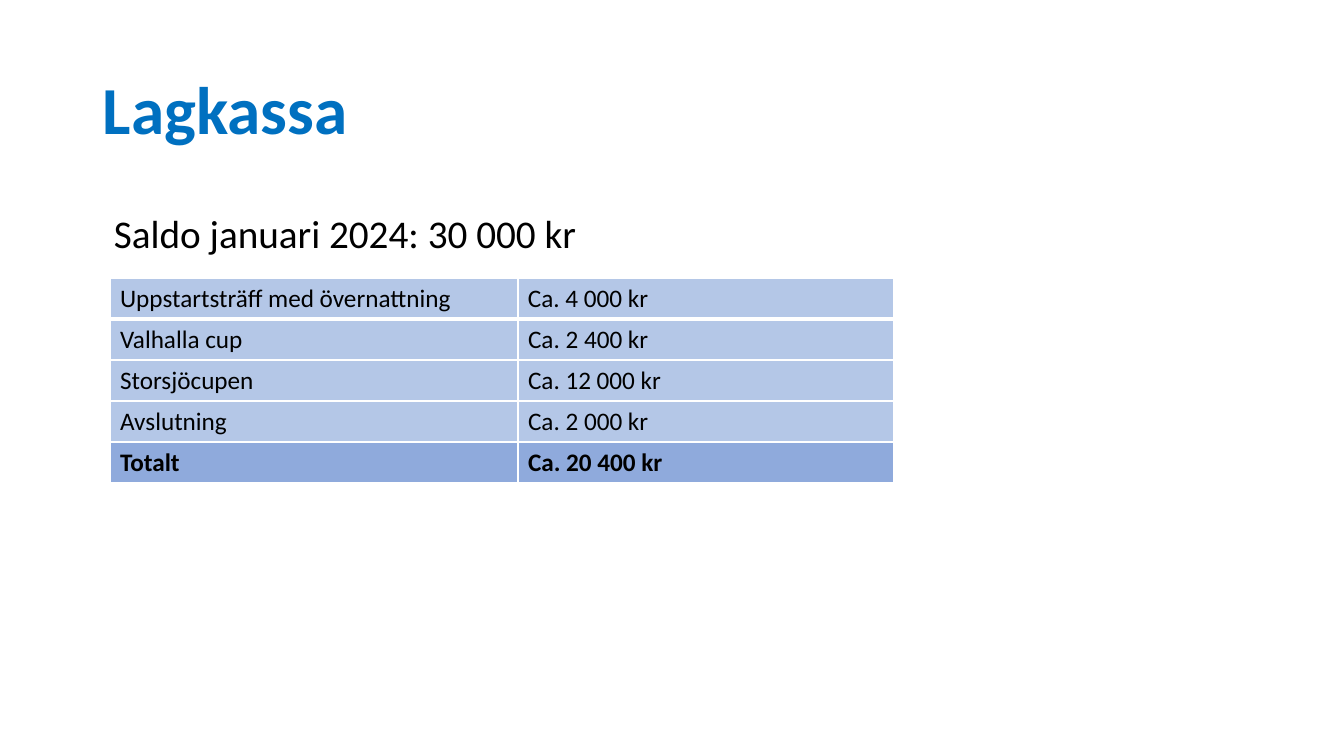
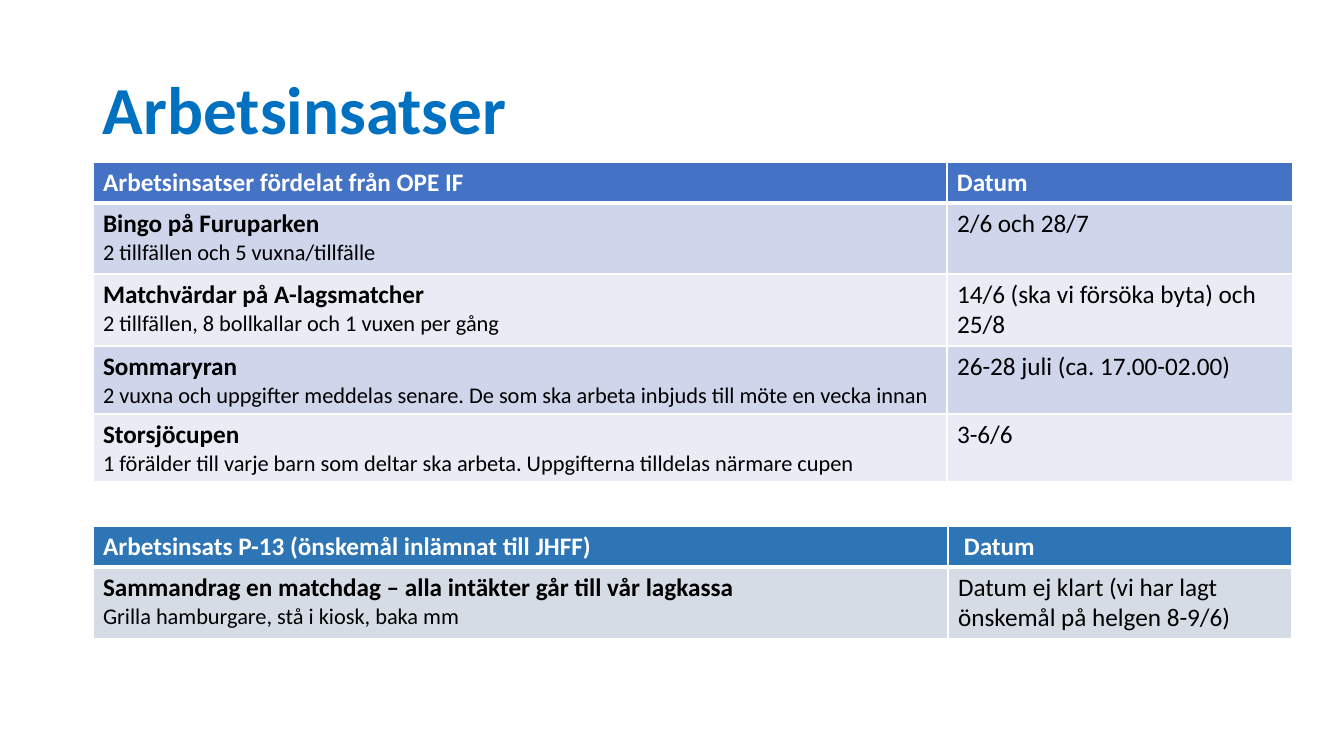
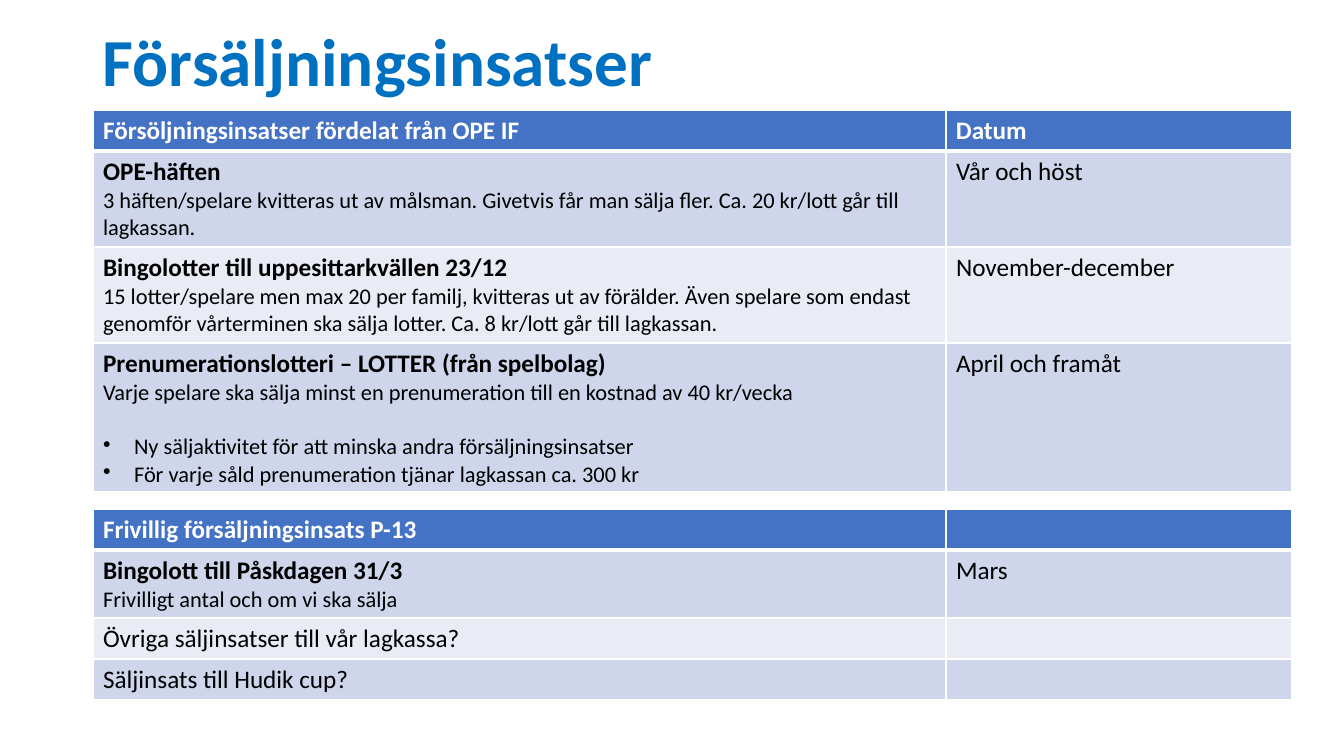
import pptx
import pptx.dml.color
import pptx.enum.text
import pptx.oxml.ns
import pptx.util
import lxml.etree

PX = 12192000 / 1344
COLORS = {
    "title": "0070C0", "black": "000000", "white": "FFFFFF",
    "sum_row": "B4C7E7", "sum_total": "8FAADC",
    "blue": "4472C4", "band_dark": "CFD5EA", "band_light": "E9EBF5",
    "teal": "2E75B6", "band_grey": "D6DCE5",
}
FORMATS = {
    "title": ({"size": pptx.util.Pt(48), "bold": True}, "title"),
    "balance": ({"size": pptx.util.Pt(28), "bold": False}, "black"),
    "header": ({"size": pptx.util.Pt(18), "bold": True}, "white"),
    "strong": ({"size": pptx.util.Pt(18), "bold": True}, "black"),
    "plain": ({"size": pptx.util.Pt(18), "bold": False}, "black"),
    "detail": ({"size": pptx.util.Pt(16), "bold": False}, "black"),
    "bullet": ({"size": pptx.util.Pt(16), "bold": False}, "black"),
}
BORDERS = ("a:lnL", "a:lnR", "a:lnT", "a:lnB")
HEADER = 41
BULLET_INDENT = round(31 * PX)
DEFAULT_INSET = 10


def px(*lengths):
    return [pptx.util.Emu(round(length * PX)) for length in lengths]


def write_lines(frame, lines):
    previous = None
    for index, (style, text) in enumerate(lines):
        para = frame.paragraphs[0] if index == 0 else frame.add_paragraph()
        if style == "bullet":
            properties = para._p.get_or_add_pPr()
            properties.set("marL", str(BULLET_INDENT))
            properties.set("indent", str(-BULLET_INDENT))
            bullet = lxml.etree.SubElement(properties, pptx.oxml.ns.qn("a:buChar"))
            bullet.set("char", "•")
            if previous != "bullet":
                para.space_before = pptx.util.Pt(19.5)
        if style == "title":
            para.line_spacing = 0.9
        span = para.add_run()
        span.text = text
        values, color = FORMATS[style]
        for name, value in {"name": "Calibri", **values}.items():
            setattr(span.font, name, value)
        span.font.color.rgb = pptx.dml.color.RGBColor.from_string(COLORS[color])
        previous = style


pages = [
    {
        "boxes": [
            ("title", "Lagkassa", (93, 40, 1159, 146)),
            ("balance", "Saldo januari 2024: 30 000 kr", (104, 204, 569, 57)),
        ],
        "tables": [{
            "at": (110, 278), "columns": (408, 376), "heights": [HEADER] * 5,
            "fills": ["sum_row"] * 4 + ["sum_total"],
            "rows": [
                [[("plain", "Uppstartsträff med övernattning")], [("plain", "Ca. 4 000 kr")]],
                [[("plain", "Valhalla cup")], [("plain", "Ca. 2 400 kr")]],
                [[("plain", "Storsjöcupen")], [("plain", "Ca. 12 000 kr")]],
                [[("plain", "Avslutning")], [("plain", "Ca. 2 000 kr")]],
                [[("strong", "Totalt")], [("strong", "Ca. 20 400 kr")]],
            ],
        }],
    },
    {
        "boxes": [("title", "Arbetsinsatser", (93, 40, 1159, 146))],
        "tables": [
            {
                "at": (93, 162), "columns": (854, 346), "heights": [HEADER, 71, 72, 68, 68],
                "fills": ["blue", "band_dark", "band_light", "band_dark", "band_light"],
                "rows": [
                    [[("header", "Arbetsinsatser fördelat från OPE IF")], [("header", "Datum")]],
                    [[("strong", "Bingo på Furuparken"),
                      ("detail", "2 tillfällen och 5 vuxna/tillfälle")],
                     [("plain", "2/6 och 28/7")]],
                    [[("strong", "Matchvärdar på A-lagsmatcher"),
                      ("detail", "2 tillfällen, 8 bollkallar och 1 vuxen per gång")],
                     [("plain", "14/6 (ska vi försöka byta) och 25/8")]],
                    [[("strong", "Sommaryran"),
                      ("detail", "2 vuxna och uppgifter meddelas senare. De som ska arbeta inbjuds till möte en vecka innan")],
                     [("plain", "26-28 juli (ca. 17.00-02.00)")]],
                    [[("strong", "Storsjöcupen"),
                      ("detail", "1 förälder till varje barn som deltar ska arbeta. Uppgifterna tilldelas närmare cupen")],
                     [("plain", "3-6/6")]],
                ],
            },
            {
                "at": (93, 526), "columns": (855, 344), "heights": [HEADER, 72],
                "fills": ["teal", "band_grey"], "date_inset": 16,
                "rows": [
                    [[("header", "Arbetsinsats P-13 (önskemål inlämnat till JHFF)")], [("header", "Datum")]],
                    [[("strong", "Sammandrag en matchdag – alla intäkter går till vår lagkassa"),
                      ("detail", "Grilla hamburgare, stå i kiosk, baka mm")],
                     [("plain", "Datum ej klart (vi har lagt önskemål på helgen 8-9/6)")]],
                ],
            },
        ],
    },
    {
        "boxes": [("title", "Försäljningsinsatser", (93, 19, 1159, 91))],
        "tables": [
            {
                "at": (93, 110), "columns": (853, 346), "heights": [HEADER, 96, 96, 149],
                "fills": ["blue", "band_dark", "band_light", "band_dark"],
                "rows": [
                    [[("header", "Försöljningsinsatser fördelat från OPE IF")], [("header", "Datum")]],
                    [[("strong", "OPE-häften"),
                      ("detail", "3 häften/spelare kvitteras ut av målsman. Givetvis får man sälja fler. Ca. 20 kr/lott går till lagkassan.")],
                     [("plain", "Vår och höst")]],
                    [[("strong", "Bingolotter till uppesittarkvällen 23/12"),
                      ("detail", "15 lotter/spelare men max 20 per familj, kvitteras ut av förälder. Även spelare som endast genomför vårterminen ska sälja lotter. Ca. 8 kr/lott går till lagkassan.")],
                     [("plain", "November-december")]],
                    [[("strong", "Prenumerationslotteri – LOTTER (från spelbolag)"),
                      ("detail", "Varje spelare ska sälja minst en prenumeration till en kostnad av 40 kr/vecka"),
                      ("bullet", "Ny säljaktivitet för att minska andra försäljningsinsatser"),
                      ("bullet", "För varje såld prenumeration tjänar lagkassan ca. 300 kr")],
                     [("plain", "April och framåt")]],
                ],
            },
            {
                "at": (93, 509), "columns": (853, 346), "heights": [HEADER, 68, 41, 41],
                "fills": ["blue", "band_dark", "band_light", "band_dark"],
                "rows": [
                    [[("header", "Frivillig försäljningsinsats P-13")], []],
                    [[("strong", "Bingolott till Påskdagen 31/3"),
                      ("detail", "Frivilligt antal och om vi ska sälja")],
                     [("plain", "Mars")]],
                    [[("plain", "Övriga säljinsatser till vår lagkassa?")], []],
                    [[("plain", "Säljinsats till Hudik cup?")], []],
                ],
            },
        ],
    },
]

deck = pptx.Presentation()
deck.slide_width, deck.slide_height = px(1344, 756)

for content in pages:
    page = deck.slides.add_slide(deck.slide_layouts[6])
    for style, text, place in content["boxes"]:
        frame = page.shapes.add_textbox(*px(*place)).text_frame
        frame.word_wrap = True
        if style == "title":
            frame.vertical_anchor = pptx.enum.text.MSO_ANCHOR.MIDDLE
        write_lines(frame, [(style, text)])

    for plan in content["tables"]:
        size = (sum(plan["columns"]), sum(plan["heights"]))
        table = page.shapes.add_table(
            len(plan["rows"]), len(plan["columns"]), *px(*plan["at"], *size)).table
        table.first_row = False
        table.horz_banding = False
        for column, width in zip(table.columns, px(*plan["columns"])):
            column.width = width
        for row, height in zip(table.rows, px(*plan["heights"])):
            row.height = height

        for row_index, (cells, fill) in enumerate(zip(plan["rows"], plan["fills"])):
            for column_index, lines in enumerate(cells):
                cell = table.cell(row_index, column_index)
                write_lines(cell.text_frame, lines)
                if row_index == 0 and column_index == 1:
                    cell.margin_left = px(plan.get("date_inset", DEFAULT_INSET))[0]
                properties = cell._tc.get_or_add_tcPr()
                for side in BORDERS:
                    thick = (row_index, side) in ((0, "a:lnB"), (1, "a:lnT"))
                    line = lxml.etree.SubElement(properties, pptx.oxml.ns.qn(side))
                    line.set("w", str(pptx.util.Pt(3 if thick else 1)))
                    paint = lxml.etree.SubElement(line, pptx.oxml.ns.qn("a:solidFill"))
                    color = lxml.etree.SubElement(paint, pptx.oxml.ns.qn("a:srgbClr"))
                    color.set("val", COLORS["white"])
                cell.fill.solid()
                cell.fill.fore_color.rgb = pptx.dml.color.RGBColor.from_string(COLORS[fill])

deck.save("out.pptx")
